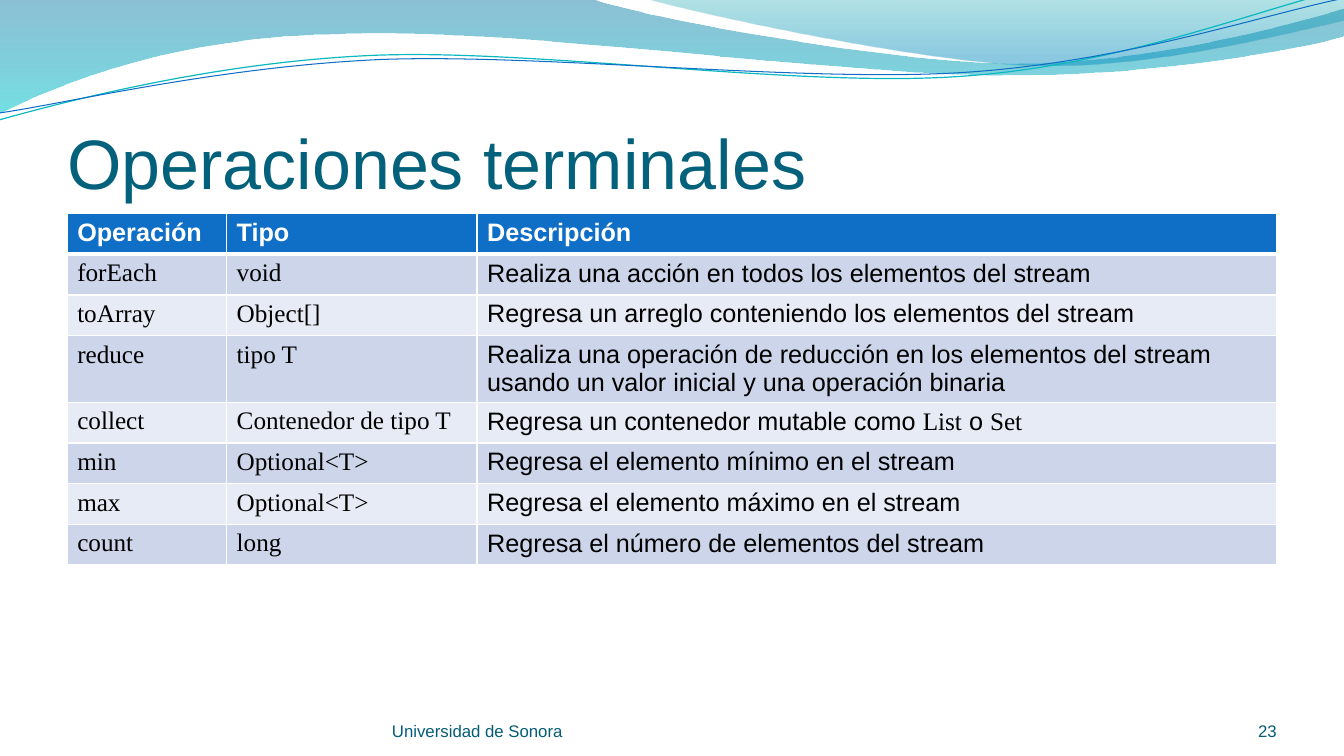
"""Build the slide that lists the terminal operations of a stream."""
from dataclasses import dataclass
from typing import NamedTuple

from lxml import etree
from pptx import Presentation
from pptx.dml.color import RGBColor
from pptx.enum import text
from pptx.oxml import ns
from pptx.util import Pt

COLORS = {
    "title": "04617B", "footer": "045D75", "header": "0F6FC6",
    "odd_row": "CCD5EA", "even_row": "E7EBF5", "white": "FFFFFF", "black": "000000",
    "deep_blue": "0074A1", "cyan": "00C6CF", "teal": "00A1A9", "sky": "008BBF",
    "teal_line": "0AB8BF", "blue_line": "0F6FC6",
}
BODY_FONT, CODE_FONT = "Arial", "Times New Roman"
UNITS_PER_POINT = 10

Point = tuple[float, float]


class Stop(NamedTuple):
    color: str
    position: float
    opacity: int


@dataclass
class Wave:
    """A curved outline: each segment is one point (line) or three (Bézier)."""
    start: Point
    segments: list[tuple[Point, ...]]
    stops: tuple[Stop, ...] = ()
    line_color: str = ""
    line_width: float = 0


@dataclass
class Operation:
    """A table row; bars in the description switch to and from the code font."""
    name: str
    kind: str
    description: str


@dataclass
class Footer:
    label: str
    left: float
    width: float
    align: text.PP_ALIGN


WAVES = [
    Wave((0, 0), [
        ((422.6, -0.7),),
        ((456.5, 12.2), (637.2, 45.4), (727.9, 45.4)),
        ((819.4, 45.4), (920.2, 18.7), (959.8, 6.5)),
        ((961.2, 25.9),),
        ((943.9, 31.7), (835.2, 54.7), (715.7, 54)),
        ((596.9, 54), (366.5, 20.2), (247, 24.5)),
        ((123.8, 25.9), (43.9, 59.8), (-0.7, 81.4)),
    ], stops=(Stop("deep_blue", 0, 45), Stop("cyan", 1, 55))),
    Wave((460.1, -0.7), [
        ((488.9, 7.9), (654.5, 44.6), (738, 46.8)),
        ((821.5, 49.7), (923, 23), (959.8, 15.1)),
        ((959.8, 0),),
    ], stops=(Stop("teal", 0, 30), Stop("sky", 0.8, 45))),
    Wave((-0.7, 85.7), [
        ((46.1, 72.7), (151.9, 44.6), (265.7, 39.6)),
        ((379.4, 34.6), (568.8, 62.6), (684, 54.7)),
        ((799.2, 47.5), (901.4, 5.8), (958.3, -7.2)),
    ], line_color="teal_line", line_width=0.85),
    Wave((0, 80.6), [
        ((45.4, 74.2), (157, 47.5), (272.2, 42.5)),
        ((386.6, 38.2), (573.1, 59), (687.6, 51.8)),
        ((802.8, 44.6), (903.6, 10.1), (960.5, -1.4)),
    ], line_color="blue_line", line_width=0.75),
]
HEADER = Operation("Operación", "Tipo", "Descripción")
OPERATIONS = [
    Operation("forEach", "void", "Realiza una acción en todos los elementos del stream"),
    Operation("toArray", "Object[]", "Regresa un arreglo conteniendo los elementos del stream"),
    Operation("reduce", "tipo T", "Realiza una operación de reducción en los elementos del "
              "stream usando un valor inicial y una operación binaria"),
    Operation("collect", "Contenedor de tipo T",
              "Regresa un contenedor mutable como |List| o |Set"),
    Operation("min", "Optional<T>", "Regresa el elemento mínimo en el stream"),
    Operation("max", "Optional<T>", "Regresa el elemento máximo en el stream"),
    Operation("count", "long", "Regresa el número de elementos del stream"),
]
COLUMN_WIDTHS = (113.9, 178.9, 571.2)
ROW_HEIGHT = 29.1
HEADER_BORDERS = {"a:lnL": 1, "a:lnR": 1, "a:lnT": 1, "a:lnB": 3}
FOOTERS = [
    Footer("Universidad de Sonora", 280, 352, text.PP_ALIGN.LEFT),
    Footer("23", 832, 80, text.PP_ALIGN.RIGHT),
]


def rgb(name: str) -> RGBColor:
    return RGBColor.from_string(COLORS[name])


def format_run(r, size: float, color: str, font: str = BODY_FONT, bold: bool = False) -> None:
    r.font.size, r.font.name, r.font.bold = Pt(size), font, bold
    r.font.color.rgb = rgb(color)


def to_units(point: Point) -> Point:
    return point[0] * UNITS_PER_POINT, point[1] * UNITS_PER_POINT


def bend_segments(sp, wave: Wave) -> None:
    corners = iter(list(sp.element.spPr.iter(ns.qn("a:lnTo"))))
    for segment in wave.segments:
        first, *others = [next(corners) for _ in segment]
        if others:
            first.tag = ns.qn("a:cubicBezTo")
            for corner in others:
                first.append(corner[0])
                corner.getparent().remove(corner)


def draw_wave(s, wave: Wave) -> None:
    builder = s.shapes.build_freeform(*to_units(wave.start), scale=Pt(1) / UNITS_PER_POINT)
    builder.add_line_segments([to_units(point) for segment in wave.segments for point in segment],
                              close=False)
    sp = builder.convert_to_shape()
    bend_segments(sp, wave)
    sp.shadow.inherit = False
    if not wave.stops:
        sp.fill.background()
        sp.line.color.rgb = rgb(wave.line_color)
        sp.line.width = Pt(wave.line_width)
        return
    outline = next(sp.element.spPr.iter(ns.qn("a:moveTo"))).getparent()
    etree.SubElement(outline, ns.qn("a:close"))
    sp.line.fill.background()
    sp.fill.gradient()
    sp.fill.gradient_angle = 270
    for target, stop in zip(sp.fill.gradient_stops, wave.stops):
        target.color.rgb = rgb(stop.color)
        target.position = stop.position
    for color, stop in zip(sp.element.spPr.iter(ns.qn("a:srgbClr")), wave.stops):
        etree.SubElement(color, ns.qn("a:alpha"), val=str(stop.opacity * 1000))


def set_frame(tf, anchor: text.MSO_ANCHOR, top: float = 0) -> None:
    tf.word_wrap, tf.auto_size = True, text.MSO_AUTO_SIZE.NONE
    tf.vertical_anchor = anchor
    tf.margin_left = tf.margin_right = tf.margin_bottom = 0
    tf.margin_top = Pt(top)


def draw_title(s, label: str) -> None:
    title = s.shapes.title
    title.left, title.top, title.width, title.height = Pt(48), Pt(55.5), Pt(864), Pt(90)
    tf = title.text_frame
    tf.text = label
    set_frame(tf, text.MSO_ANCHOR.BOTTOM, top=3.6)
    p = tf.paragraphs[0]
    p.alignment = text.PP_ALIGN.LEFT
    format_run(p.runs[0], 50, "title")


def add_header_borders(cell) -> None:
    properties = cell.fill._xPr
    for position, (side, width) in enumerate(HEADER_BORDERS.items()):
        border = etree.Element(ns.qn(side), w=str(Pt(width)))
        fill = etree.SubElement(border, ns.qn("a:solidFill"))
        etree.SubElement(fill, ns.qn("a:srgbClr"), val=COLORS["white"])
        properties.insert(position, border)


def draw_table(s) -> None:
    rows = [HEADER, *OPERATIONS]
    table = s.shapes.add_table(len(rows), len(COLUMN_WIDTHS), Pt(48), Pt(152.5),
                               Pt(sum(COLUMN_WIDTHS)), Pt(ROW_HEIGHT * len(rows))).table
    for column, width in zip(table.columns, COLUMN_WIDTHS):
        column.width = Pt(width)
    for i, operation in enumerate(rows):
        table.rows[i].height = Pt(ROW_HEIGHT)
        is_header = i == 0
        fill = "header" if is_header else "odd_row" if i % 2 else "even_row"
        labels = (operation.name, operation.kind, operation.description)
        for j, label in enumerate(labels):
            cell = table.cell(i, j)
            cell.fill.solid()
            cell.fill.fore_color.rgb = rgb(fill)
            if is_header:
                add_header_borders(cell)
            p = cell.text_frame.paragraphs[0]
            for k, part in enumerate(label.split("|")):
                r = p.add_run()
                r.text = part
                is_code = not is_header and (j < 2 or k % 2 == 1)
                format_run(r, 18, "white" if is_header else "black",
                           CODE_FONT if is_code else BODY_FONT, is_header)


def draw_footer(s, footer: Footer) -> None:
    tf = s.shapes.add_textbox(Pt(footer.left), Pt(500.5), Pt(footer.width), Pt(28.8)).text_frame
    tf.text = footer.label
    set_frame(tf, text.MSO_ANCHOR.BOTTOM)
    p = tf.paragraphs[0]
    p.alignment = footer.align
    format_run(p.runs[0], 12, "footer")


def main() -> None:
    prs = Presentation()
    prs.slide_width, prs.slide_height = Pt(960), Pt(540)
    s = prs.slides.add_slide(prs.slide_layouts[5])
    for wave in WAVES:
        draw_wave(s, wave)
    draw_title(s, "Operaciones terminales")
    draw_table(s)
    for footer in FOOTERS:
        draw_footer(s, footer)
    prs.save("out.pptx")


if __name__ == "__main__":
    main()
